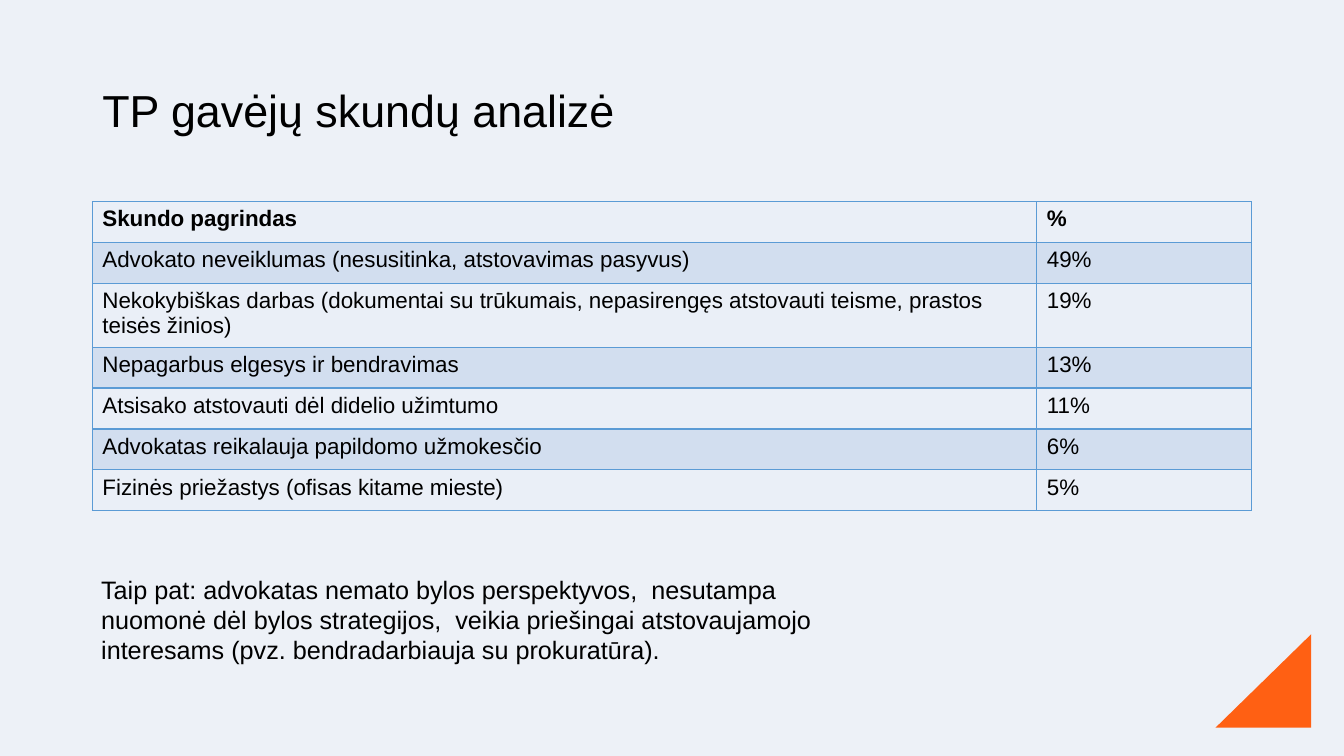
from lxml import etree
from pptx import Presentation
from pptx.dml.color import RGBColor
from pptx.enum.shapes import MSO_SHAPE
from pptx.enum.text import MSO_ANCHOR
from pptx.oxml.ns import qn
from pptx.util import Pt

RIGHT_TRIANGLE = MSO_SHAPE.RIGHT_TRIANGLE
TOP, MIDDLE = MSO_ANCHOR.TOP, MSO_ANCHOR.MIDDLE

FONT = "Arial"
BLACK = RGBColor(0x00, 0x00, 0x00)
BACKGROUND = RGBColor(0xED, 0xF1, 0xF7)
ORANGE = RGBColor(0xFF, 0x60, 0x13)
BORDER = RGBColor(0x5B, 0x9B, 0xD5)
BANDS = (RGBColor(0xEA, 0xEF, 0xF7), RGBColor(0xD2, 0xDE, 0xEF))

TITLE = "TP gavėjų skundų analizė"
COMPLAINTS = [
    ("Skundo pagrindas", "%"),
    ("Advokato neveiklumas (nesusitinka, atstovavimas pasyvus)", "49%"),
    ("Nekokybiškas darbas (dokumentai su trūkumais, nepasirengęs atstovauti "
     "teisme, prastos teisės žinios)", "19%"),
    ("Nepagarbus elgesys ir bendravimas", "13%"),
    ("Atsisako atstovauti dėl didelio užimtumo", "11%"),
    ("Advokatas reikalauja papildomo užmokesčio", "6%"),
    ("Fizinės priežastys (ofisas kitame mieste)", "5%"),
]
OTHER_REASONS = (
    "Taip pat: advokatas nemato bylos perspektyvos,  nesutampa nuomonė dėl "
    "bylos strategijos,  veikia priešingai atstovaujamojo interesams "
    "(pvz. bendradarbiauja su prokuratūra).")


def write(frame, text, size=16, bold=False, color=BLACK, spacing=None):
    frame.word_wrap = True
    paragraph = frame.paragraphs[0]
    paragraph.line_spacing = spacing
    run = paragraph.add_run()
    run.text = text
    run.font.name = FONT
    run.font.size = Pt(size)
    run.font.bold = bold
    run.font.color.rgb = color


def add_text(slide, box, text, anchor=TOP, **text_format):
    frame = slide.shapes.add_textbox(*map(Pt, box)).text_frame
    frame.vertical_anchor = anchor
    write(frame, text, **text_format)


def add_borders(cell, color=BORDER, width=1):
    properties = cell._tc.get_or_add_tcPr()
    # Border lines come before the fill in the cell properties
    for position, side in enumerate(("a:lnL", "a:lnR", "a:lnT", "a:lnB")):
        line = etree.Element(qn(side), w=str(Pt(width)))
        fill = etree.SubElement(line, qn("a:solidFill"))
        etree.SubElement(fill, qn("a:srgbClr"), val=str(color))
        properties.insert(position, line)


def add_complaints_table(slide, box, percent_width=153.4):
    left, top, width, height = box
    table = slide.shapes.add_table(
        len(COMPLAINTS), 2, Pt(left), Pt(top), Pt(width), Pt(height)).table
    table.columns[0].width = Pt(width - percent_width)
    table.columns[1].width = Pt(percent_width)
    for index, complaint in enumerate(COMPLAINTS):
        for cell, text in zip(table.rows[index].cells, complaint):
            cell.fill.solid()
            cell.fill.fore_color.rgb = BANDS[index % 2]
            add_borders(cell)
            write(cell.text_frame, text, bold=index == 0)


def add_corner(slide, box):
    corner = slide.shapes.add_shape(RIGHT_TRIANGLE, *map(Pt, box))
    corner.shadow.inherit = False
    corner.fill.solid()
    corner.fill.fore_color.rgb = ORANGE
    corner.line.fill.background()
    # Mirror it so the right angle sits at the lower right
    corner._element.spPr.find(qn("a:xfrm")).set("flipH", "1")


def build_complaints_slide(presentation):
    slide = presentation.slides.add_slide(presentation.slide_layouts[6])
    background = slide.background.fill
    background.solid()
    background.fore_color.rgb = BACKGROUND

    # Title
    add_text(slide, (66, 28.8, 828, 104.4), TITLE, anchor=MIDDLE, size=32,
             spacing=0.9)
    # Corner decoration
    add_corner(slide, (868.2, 453, 68.4, 66.8))
    # Complaint shares
    add_complaints_table(slide, (66, 144, 828, 204.4))
    # Further reasons
    add_text(slide, (65.2, 406.4, 573, 72.7), OTHER_REASONS, size=18)


def main():
    presentation = Presentation()
    presentation.slide_width = Pt(960)
    presentation.slide_height = Pt(540)
    build_complaints_slide(presentation)
    presentation.save("out.pptx")


if __name__ == "__main__":
    main()
